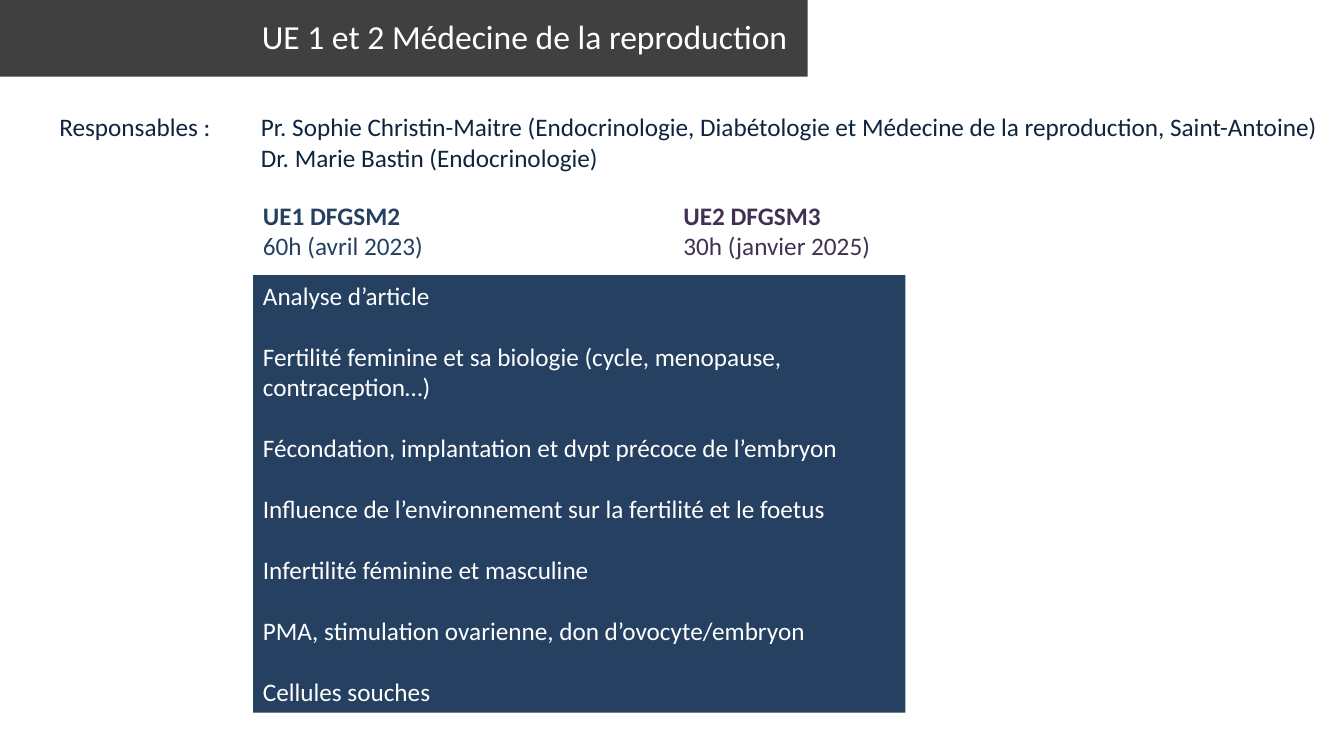
"""Build the slide presenting the two reproductive medicine courses."""
from dataclasses import dataclass

import pptx
import pptx.dml.color
import pptx.enum.shapes
import pptx.enum.text
import pptx.util
from lxml import etree
from pptx.oxml.ns import qn
from pptx.util import Inches, Pt

ALIGN = pptx.enum.text.PP_ALIGN
ANCHOR = pptx.enum.text.MSO_ANCHOR


@dataclass
class Block:
    box: tuple[float, float, float, float]
    lines: list[str]
    ink: str
    fill: str = ""
    size: int = 18
    align: ALIGN = ALIGN.LEFT
    inset: tuple[float, float] = (0.1, 0.05)
    gap: int = 0
    tab: float = 0
    head: bool = False


def color(code: str) -> pptx.dml.color.RGBColor:
    return pptx.dml.color.RGBColor.from_string(code)


def apply(target: object, values: dict) -> None:
    for name, value in values.items():
        setattr(target, name, value)


def set_tab(para, place: float) -> None:
    stops = etree.SubElement(para._p.get_or_add_pPr(), qn("a:tabLst"))
    etree.SubElement(stops, qn("a:tab"), pos=str(Inches(place)), algn="l")


def add_frame(slide, block: Block):
    box = [Inches(n) for n in block.box]
    if not block.fill:
        return slide.shapes.add_textbox(*box).text_frame
    rect = pptx.enum.shapes.MSO_SHAPE.RECTANGLE
    shape = slide.shapes.add_shape(rect, *box)
    shape.shadow.inherit = False
    shape.fill.solid()
    shape.fill.fore_color.rgb = color(block.fill)
    shape.line.fill.background()
    return shape.text_frame


def draw(slide, block: Block) -> None:
    frame = add_frame(slide, block)
    side, top = (Inches(n) for n in block.inset)
    apply(frame, {"word_wrap": True, "vertical_anchor": ANCHOR.TOP,
                  "margin_left": side, "margin_right": side,
                  "margin_top": top, "margin_bottom": Inches(0.05)})
    for i, line in enumerate(block.lines):
        para = frame.paragraphs[0] if i == 0 else frame.add_paragraph()
        if i and block.gap:
            para.space_before = Pt(block.gap)
        para.alignment = block.align
        if block.tab:
            set_tab(para, block.tab)
        run = para.add_run()
        run.text = line
        apply(run.font, {"name": "Calibri", "size": Pt(block.size),
                         "bold": block.head and i == 0})
        run.font.color.rgb = color(block.ink)


BLOCKS = [
    Block((-0.12, -0.3, 8.13, 1.06), ["UE 1 et 2 Médecine de la reproduction"],
          "FFFFFF", "404040", size=24, align=ALIGN.RIGHT, inset=(0.2, 0.46)),
    Block((2.51, 1.94, 2.52, 0.71), ["UE1 DFGSM2", "60h (avril 2023)"],
          "254061", head=True),
    Block((6.68, 1.94, 2.96, 0.71), ["UE2 DFGSM3", "30h (janvier 2025)"],
          "403152", head=True),
    Block((2.51, 2.73, 6.47, 4.34), [
        "Analyse d’article",
        "Fertilité feminine et sa biologie (cycle, menopause, contraception…)",
        "Fécondation, implantation et dvpt précoce de l’embryon",
        "Influence de l’environnement sur la fertilité et le foetus",
        "Infertilité féminine et masculine",
        "PMA, stimulation ovarienne, don d’ovocyte/embryon",
        "Cellules souches",
    ], "FFFFFF", "254061", gap=22),
    Block((0.49, 1.06, 12.76, 0.71), [
        "Responsables :\tPr. Sophie Christin-Maitre (Endocrinologie, "
        "Diabétologie et Médecine de la reproduction, Saint-Antoine)",
        "\tDr. Marie Bastin (Endocrinologie)",
    ], "0F243E", tab=2),
]


def main() -> None:
    deck = pptx.Presentation()
    apply(deck, {"slide_width": Inches(13.33), "slide_height": Inches(7.5)})
    slide = deck.slides.add_slide(deck.slide_layouts[6])
    for block in BLOCKS:
        draw(slide, block)
    deck.save("out.pptx")


if __name__ == "__main__":
    main()
